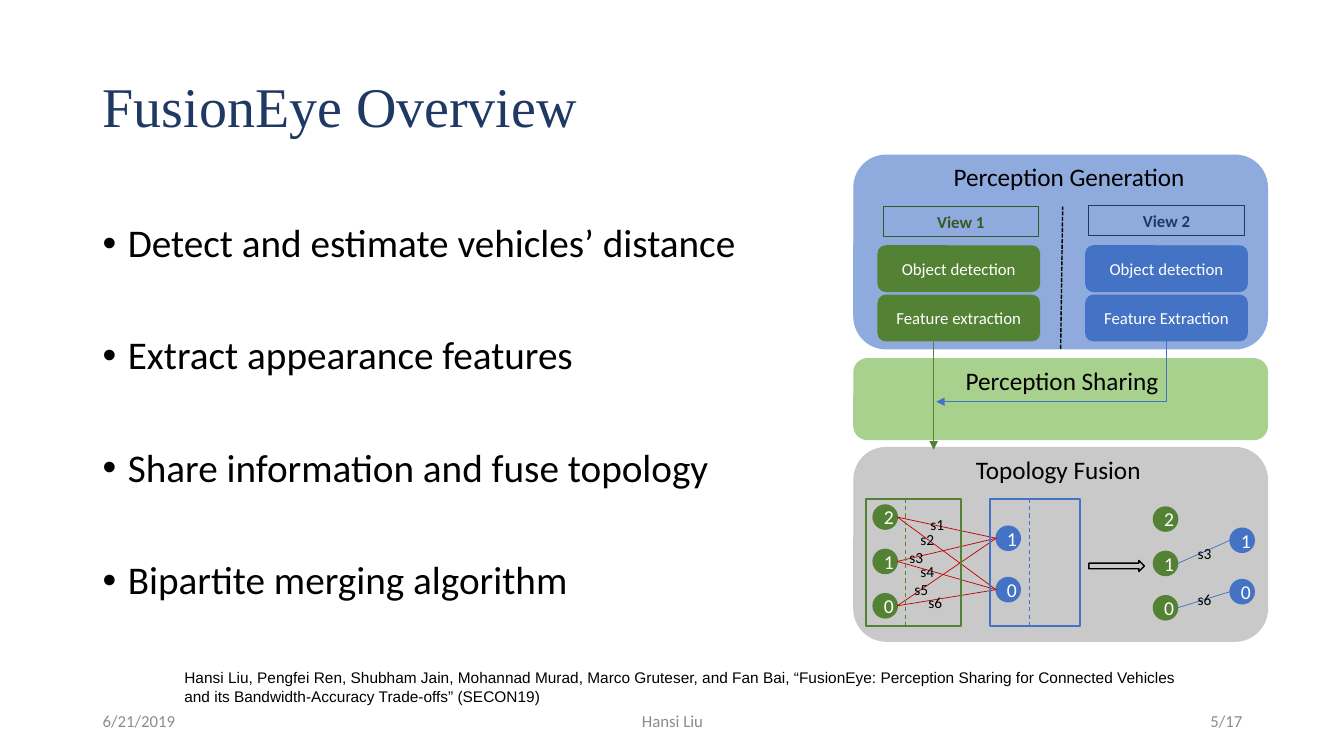
from typing import NamedTuple

from pptx import Presentation
from pptx.dml.color import RGBColor
from pptx.enum.dml import MSO_LINE_DASH_STYLE as Dash
from pptx.enum.shapes import MSO_CONNECTOR as Link, MSO_SHAPE as Form
from pptx.enum.text import MSO_ANCHOR as Anchor, PP_ALIGN as Align
from pptx.oxml.ns import qn
from pptx.oxml.xmlchemy import OxmlElement as Element
from pptx.util import Inches, Pt

# Grid of square cells, ten to the inch
COLS, ROWS, CELL = 133.3, 75, Inches(0.1)
GREEN, BLUE, RED, BLACK, WHITE = "548235", "4472C4", "C00000", "000000", "FFFFFF"
NAVY, PINE, GREY = "203864", "385723", "8C8C8C"
NODE = 2.4


class Box(NamedTuple):
    col: float
    row: float
    wide: float
    high: float


class Type(NamedTuple):
    size: float
    color: str = BLACK
    align: Align = Align.LEFT
    anchor: Anchor = Anchor.TOP
    bold: bool = False
    font: str = "Calibri"


class Panel(NamedTuple):
    row: float
    high: float
    color: str
    head: str
    left: float


class View(NamedTuple):
    col: float
    color: str
    name: str
    name_box: Box
    name_color: str
    steps: tuple


def cells(*nums: float) -> list:
    return [int(num * CELL) for num in nums]


def paint(color: str) -> RGBColor:
    return RGBColor.from_string(color)


def write(shape, text: str, kind: Type) -> None:
    frame = shape.text_frame
    frame.word_wrap = True
    frame.vertical_anchor = kind.anchor
    frame.text = text
    for para in frame.paragraphs:
        para.alignment = kind.align
        for run in para.runs:
            font = run.font
            font.name, font.size, font.bold = kind.font, Pt(kind.size), kind.bold
            font.color.rgb = paint(kind.color)


def add_text(box: Box, text: str, kind: Type):
    shape = slide.shapes.add_textbox(*cells(*box))
    write(shape, text, kind)
    return shape


def add_form(form: Form, box: Box, line: str, fill: str = "", width: float = 1):
    shape = slide.shapes.add_shape(form, *cells(*box))
    shape.shadow.inherit = False
    if fill:
        shape.fill.solid()
        shape.fill.fore_color.rgb = paint(fill)
    else:
        shape.fill.background()
    shape.line.color.rgb = paint(line)
    shape.line.width = Pt(width)
    return shape


def add_line(start: tuple, end: tuple, color: str, width: float = 0.5,
             dash=None, arrow: bool = False, link: Link = Link.STRAIGHT):
    line = slide.shapes.add_connector(link, *cells(*start, *end))
    line.line.color.rgb = paint(color)
    line.line.width = Pt(width)
    if dash:
        line.line.dash_style = dash
    if arrow:
        tip = Element("a:tailEnd")
        tip.set("type", "triangle")
        line.line._get_or_add_ln().append(tip)
    line._element.spPr.append(Element("a:effectLst"))
    return line


def add_nodes(col: float, row: float, gap: float, marks: str, color: str) -> dict:
    """Draw a column of nodes and give the middle row of each."""
    mids = {}
    for i, mark in enumerate(marks):
        top = row + i * gap
        node = add_form(Form.OVAL, Box(col, top, NODE, NODE), color, color)
        write(node, mark, Type(14, WHITE, Align.CENTER, Anchor.MIDDLE))
        mids[mark] = top + NODE / 2
    return mids


def add_graph(left: float, right: float, row: float, pairs: list,
              color: str, tags: list) -> None:
    """Draw two node columns, the lines between them and the scores."""
    greens = add_nodes(left, row, 4.4, "210", GREEN)
    blues = add_nodes(right, row + 2.1, 5.1, "10", BLUE)
    for a, b in pairs:
        add_line((left + NODE, greens[a]), (right, blues[b]), color)
    for tag, col, top in tags:
        add_text(Box(col, top, 4.3, 2.9), tag, Type(11))


deck = Presentation()
deck.slide_width, deck.slide_height = cells(COLS, ROWS)
slide = deck.slides.add_slide(deck.slide_layouts[5])

# Title
title = slide.shapes.title
title.left, title.top, title.width, title.height = cells(9.2, 6.1, 115, 9.6)
write(title, "FusionEye Overview",
      Type(40, NAVY, anchor=Anchor.MIDDLE, font="Times New Roman"))
title.text_frame.paragraphs[0].line_spacing = 0.9

# Stage panels with their heads
panels = [
    Panel(15.4, 19.2, "8FAADC", "Perception Generation", 93.6),
    Panel(35.6, 8, "A9D18E", "Perception Sharing", 94.8),
    Panel(44.4, 19.2, "C9C9C9", "Topology Fusion", 95.8),
]
plates = []
for panel in panels:
    plates.append(add_form(Form.ROUNDED_RECTANGLE, Box(84.7, panel.row, 41, panel.high),
                           panel.color, panel.color))
    add_text(Box(panel.left, panel.row + 0.15, 28, 4), panel.head, Type(18))

# Views and their steps
views = [
    View(87.1, GREEN, "View 1", Box(87.6, 20.5, 15.4, 3), PINE,
         ("Object detection", "Feature extraction")),
    View(107.7, BLUE, "View 2", Box(108, 20.4, 15.4, 3), NAVY,
         ("Object detection", "Feature Extraction")),
]
for view in views:
    label = add_form(Form.RECTANGLE, view.name_box, view.name_color, width=0.75)
    write(label, view.name, Type(12, view.name_color, Align.CENTER, bold=True))
    for i, step in enumerate(view.steps):
        block = add_form(Form.ROUNDED_RECTANGLE, Box(view.col, 24.4 + 4.9 * i, 16, 4.5),
                         view.color, view.color)
        write(block, step, Type(12, WHITE, Align.CENTER, Anchor.MIDDLE))
rule = add_line((105.3, 34.7), (105.4, 20.5), BLACK, 1, Dash.SQUARE_DOT)
rule.begin_connect(plates[0], 2)

# Topology before and after the merge
add_graph(86.6, 98.8, 50.1, [(a, b) for a in "210" for b in "10"], RED,
          [("s1", 91.3, 50.6), ("s2", 90.3, 52.1), ("s3", 89.2, 53.9),
           ("s4", 90.3, 55.3), ("s5", 89.7, 57.1), ("s6", 91.1, 58.3)])
for col, wide, color in ((85.9, 9.4, GREEN), (98.2, 8.9, BLUE)):
    add_form(Form.RECTANGLE, Box(col, 49.5, wide, 12.6), color)
    add_line((col + 3.9, 49.5), (col + 3.9, 62.1), color, 0.75, Dash.DASH)
add_form(Form.RIGHT_ARROW, Box(108, 55.6, 5.5, 1.1), BLACK)
add_graph(114.4, 122, 50.3, [("1", "1"), ("0", "0")], BLUE,
          [("s3", 117.8, 53.5), ("s6", 117.8, 58.1)])

# Flow from the views down to the fusion stage
add_line((92.6, 33.9), (92.6, 44.6), GREEN, arrow=True)
bend = add_line((101.2, 25.4), (107.3, 48.2), BLUE, arrow=True, link=Link.ELBOW)
shell = bend._element.spPr
shell.find(qn("a:prstGeom")).set("prst", "bentConnector2")
shell.find(qn("a:xfrm")).set("rot", str(90 * 60000))

# Bullet list
points = [
    "Detect and estimate vehicles’ distance",
    "Extract appearance features",
    "Share information and fuse topology",
    "Bipartite merging algorithm",
]
body = add_text(Box(9.2, 21.7, 74.7, 41), "\n".join(points), Type(28))
for i, para in enumerate(body.text_frame.paragraphs):
    props = para._p.get_or_add_pPr()
    props.set("marL", str(Inches(0.25)))
    props.set("indent", str(-Inches(0.25)))
    for tag, key, value in (("a:buFont", "typeface", "Arial"), ("a:buChar", "char", "•")):
        mark = Element(tag)
        mark.set(key, value)
        props.append(mark)
    para.line_spacing = 0.9
    para.space_before = Pt(50 if i else 0)

# Citation and footer
add_text(Box(17.3, 65.8, 102.3, 4.7),
         "Hansi Liu, Pengfei Ren, Shubham Jain, Mohannad Murad, Marco Gruteser, and "
         "Fan Bai, “FusionEye: Perception Sharing for Connected Vehicles and its "
         "Bandwidth-Accuracy Trade-offs” (SECON19)", Type(11, font="Arial"))
for col, wide, text, align in ((9.2, 30, "6/21/2019", Align.LEFT),
                               (44.2, 45, "Hansi Liu", Align.CENTER),
                               (94.2, 30, "5/17", Align.RIGHT)):
    add_text(Box(col, 69.5, wide, 4), text, Type(12, GREY, align, Anchor.MIDDLE))

deck.save("out.pptx")
